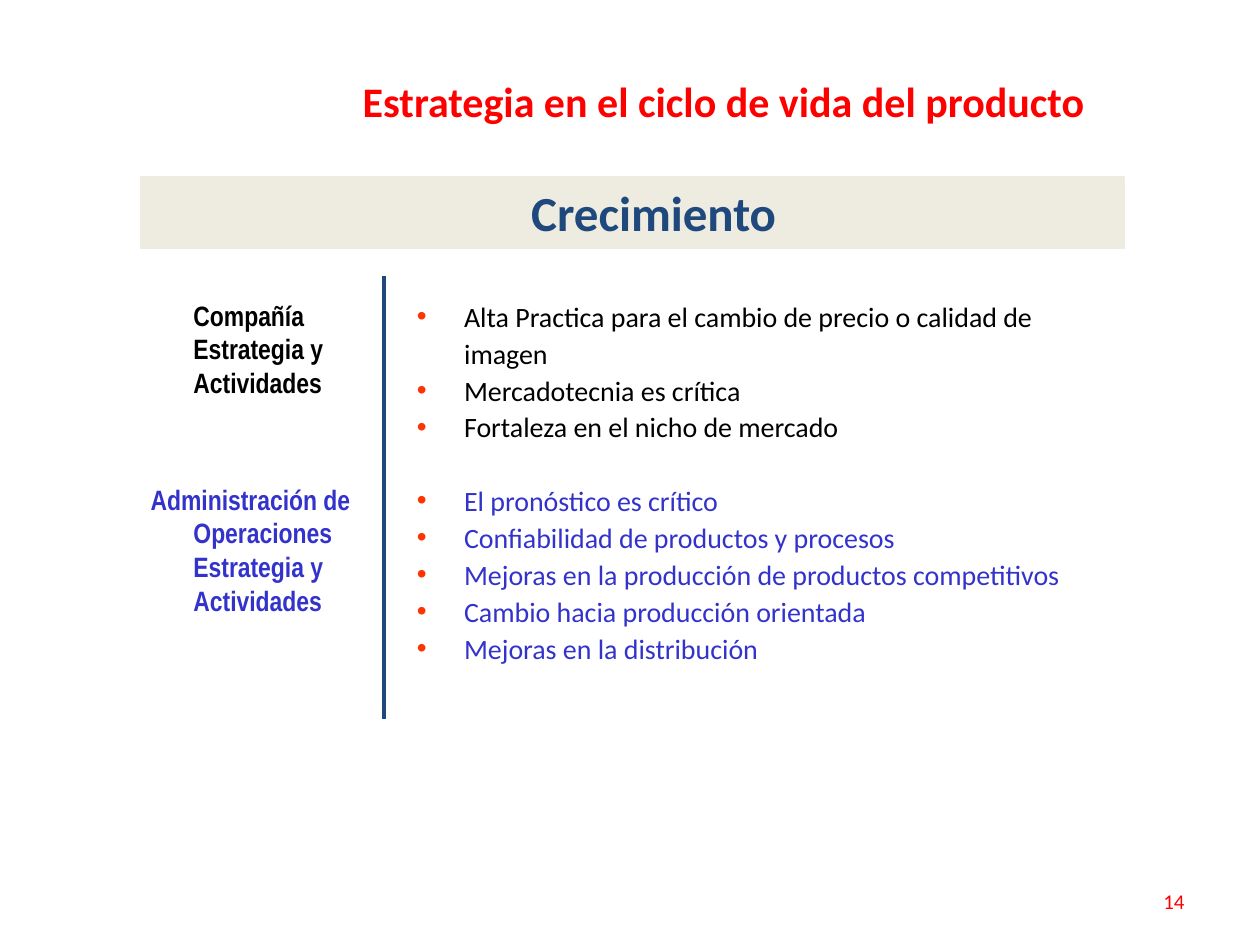
"""Build the growth-stage slide of the product life cycle strategy."""
import lxml.etree
import pptx
import pptx.dml.color
import pptx.enum.shapes
import pptx.enum.text
import pptx.oxml.ns
import pptx.util

Pt = pptx.util.Pt
ALIGN = pptx.enum.text.PP_ALIGN
ANCHOR = pptx.enum.text.MSO_ANCHOR
HUES = {
    "red": "FF0000",
    "dot": "FF3300",
    "navy": "1F497D",
    "blue": "3333CC",
    "black": "000000",
    "sand": "EEECE1",
}
FIRM = [
    "Alta Practica para el cambio de precio o calidad de imagen",
    "Mercadotecnia es crítica",
    "Fortaleza en el nicho de mercado",
]
PLANT = [
    "El pronóstico es crítico",
    "Confiabilidad de productos y procesos",
    "Mejoras en la producción de productos competitivos",
    "Cambio hacia producción orientada",
    "Mejoras en la distribución",
]


def hue(name):
    return pptx.dml.color.RGBColor.from_string(HUES[name])


class Deck:
    def __init__(self):
        self.file = pptx.Presentation()
        self.file.slide_width, self.file.slide_height = Pt(720), Pt(540)
        self.slide = self.file.slides.add_slide(self.file.slide_layouts[1])
        self.forms = self.slide.shapes

    def place(self, shape, box):
        shape.left, shape.top, shape.width, shape.height = map(Pt, box)

    def frame(self, shape, anchor=ANCHOR.TOP):
        frame = shape.text_frame
        frame.word_wrap = True
        frame.auto_size = pptx.enum.text.MSO_AUTO_SIZE.NONE
        frame.vertical_anchor = anchor
        return frame

    def style(self, para, size, color, bold=False, face="Calibri", align=ALIGN.LEFT):
        para.alignment = align
        font = para.font
        font.name, font.size, font.bold = face, Pt(size), bold
        font.color.rgb = hue(color)

    def indent(self, para, left, first=0):
        props = para._p.get_or_add_pPr()
        props.set("marL", str(Pt(left)))
        props.set("indent", str(Pt(first)))
        return props

    def fill(self, frame, text, index):
        para = frame.paragraphs[0] if index == 0 else frame.add_paragraph()
        para.text = text
        return para

    def title(self, text, box):
        shape = self.forms.title
        self.place(shape, box)
        para = self.fill(self.frame(shape, ANCHOR.MIDDLE), text, 0)
        self.style(para, 24, "red", True, align=ALIGN.CENTER)

    def list(self, groups, gap, box):
        shape = self.slide.placeholders[1]
        self.place(shape, box)
        frame = self.frame(shape)
        rows = [(text, color, place) for color, texts in groups
                for place, text in enumerate(texts)]
        for index, (text, color, place) in enumerate(rows):
            para = self.fill(frame, text, index)
            para.line_spacing = 1.1
            para.space_before = Pt(gap if index and place == 0 else 0)
            props = self.indent(para, 27, -27)
            tint = lxml.etree.SubElement(props, pptx.oxml.ns.qn("a:buClr"))
            lxml.etree.SubElement(tint, pptx.oxml.ns.qn("a:srgbClr"), val=HUES["dot"])
            lxml.etree.SubElement(props, pptx.oxml.ns.qn("a:buChar"), char="•")
            self.style(para, 16, color)

    def band(self, text, left, box):
        shape = self.forms.add_shape(
            pptx.enum.shapes.MSO_SHAPE.RECTANGLE, *map(Pt, box))
        shape.shadow.inherit = False
        shape.fill.solid()
        shape.fill.fore_color.rgb = hue("sand")
        shape.line.color.rgb = hue("sand")
        shape.line.width = Pt(1)
        para = self.fill(self.frame(shape), text, 0)
        self.indent(para, left)
        self.style(para, 28, "navy", True)

    def rule(self, x, top, end):
        line = self.forms.add_connector(
            pptx.enum.shapes.MSO_CONNECTOR.STRAIGHT, Pt(x), Pt(top), Pt(x), Pt(end))
        line.line.color.rgb = hue("navy")
        line.line.width = Pt(2)
        lxml.etree.SubElement(line._element.spPr, pptx.oxml.ns.qn("a:effectLst"))

    def heads(self, items, gap, box):
        frame = self.frame(self.forms.add_textbox(*map(Pt, box)))
        for index, (text, color, first) in enumerate(items):
            para = self.fill(frame, text, index)
            para.space_before = Pt(gap if index else 0)
            self.indent(para, 24.5, first)
            self.style(para, 16, color, True, "Arial Narrow")

    def number(self, text, box):
        shape = self.forms.add_textbox(*map(Pt, box))
        para = self.fill(self.frame(shape, ANCHOR.MIDDLE), text, 0)
        self.style(para, 12, "red", align=ALIGN.RIGHT)


def main():
    deck = Deck()
    deck.title("Estrategia en el ciclo de vida del producto", (163.5, 39.5, 500, 36))
    deck.list([("black", FIRM), ("blue", PLANT)], 21, (231, 165.5, 403, 254))
    deck.band("Crecimiento", 216, (80.5, 101, 562, 41))
    deck.rule(219.5, 157.5, 411)
    deck.heads([
        ("Compañía Estrategia y Actividades", "black", 0),
        ("Administración de Operaciones Estrategia y Actividades", "blue", -24.5),
    ], 47.5, (79, 167, 130, 250.5))
    deck.number("14", (516, 500.5, 168, 29))
    deck.file.save("out.pptx")


if __name__ == "__main__":
    main()
